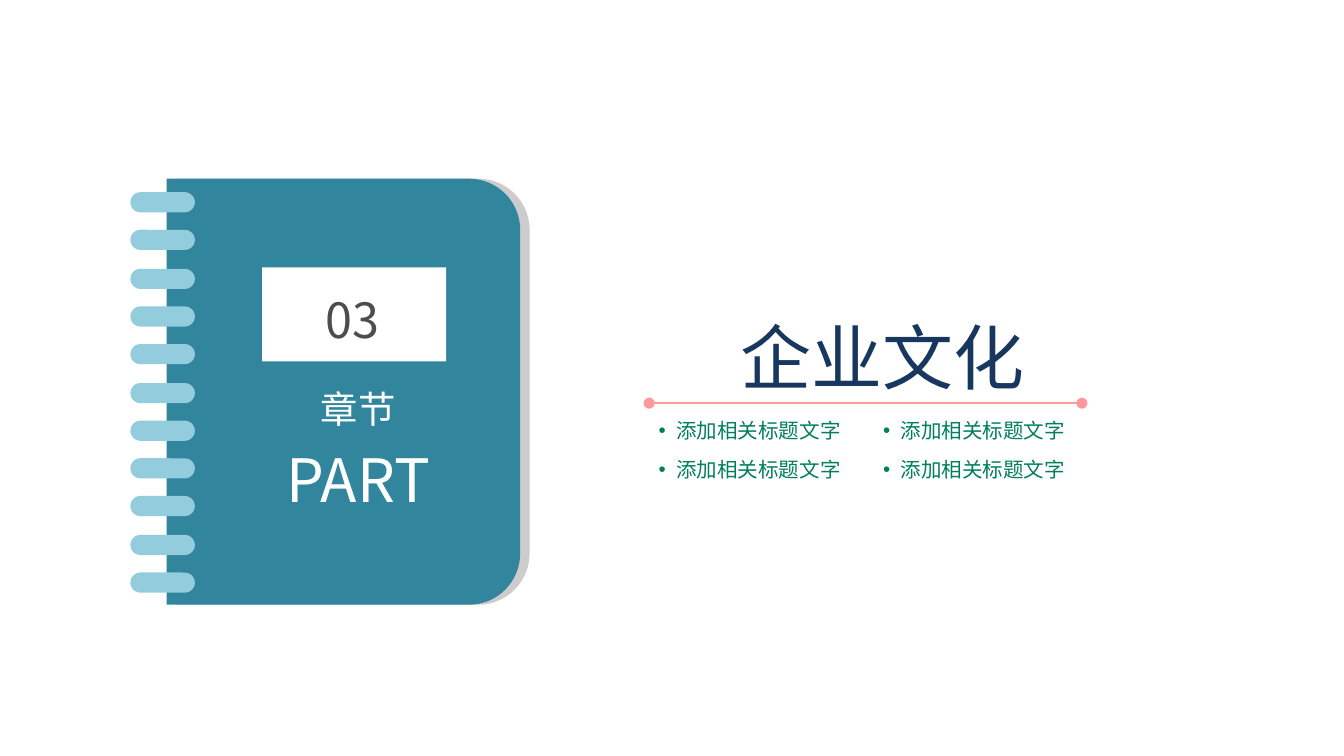
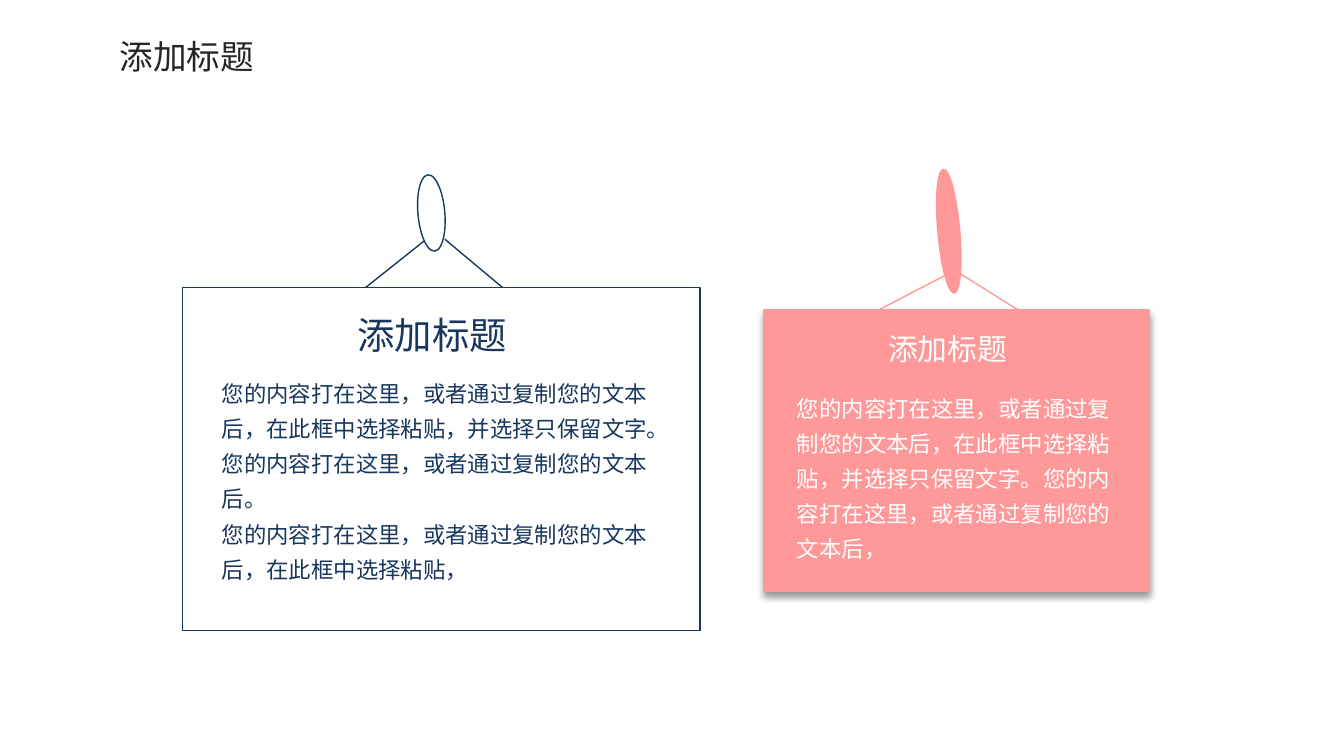
from lxml.etree import SubElement
from pptx import Presentation
from pptx.dml.color import RGBColor
from pptx.enum.shapes import MSO_CONNECTOR, MSO_SHAPE
from pptx.enum.text import MSO_AUTO_SIZE, PP_ALIGN
from pptx.oxml.ns import qn
from pptx.util import Pt

PX = 9144  # 100 px to the inch
NAVY, PINK, WHITE, TEAL, SKY = "17375E", "FF9999", "FFFFFF", "31859C", "93CDDD"
GREEN, GREY, INK, DARK = "007E5D", "CCCCCC", "4D4D4D", "262626"
ARIAL, NOTO = "Arial", "Noto Sans CJK SC"
hue = RGBColor.from_string

deck = Presentation()
deck.slide_width = 1000 * PX
deck.slide_height = deck.slide_width * 9 // 16
blank = deck.slide_layouts[6]


def draw(host, kind, box, fill=None, line=None, width=1):
    """Add a preset shape, or a straight connector when kind is None."""
    spots = [n * PX for n in box]
    if kind is None:
        shape = host.add_connector(MSO_CONNECTOR.STRAIGHT, *spots)
        SubElement(shape._element.spPr, qn("a:effectLst"))
    else:
        shape = host.add_shape(kind, *spots)
        shape.shadow.inherit = False
        if fill:
            shape.fill.solid()
            shape.fill.fore_color.rgb = hue(fill)
        else:
            shape.fill.background()
    if line:
        shape.line.color.rgb = hue(line)
        shape.line.width = Pt(width)
    else:
        shape.line.fill.background()
    return shape


def write(host, box, rows, color, face=NOTO, pad=(10, 5), wrap=True,
          align=None, lead=None, dot=False):
    """Add a text box; rows holds (text, size) pairs, one a paragraph."""
    frame = host.add_textbox(*[n * PX for n in box]).text_frame
    frame.word_wrap = wrap
    frame.auto_size = MSO_AUTO_SIZE.SHAPE_TO_FIT_TEXT
    frame.margin_left = frame.margin_right = pad[0] * PX
    frame.margin_top = frame.margin_bottom = pad[1] * PX
    for i, (words, size) in enumerate(rows):
        para = frame.add_paragraph() if i else frame.paragraphs[0]
        if dot:
            para.level = 1
            props = para._p.get_or_add_pPr()
            props.set("marL", str(13 * PX))
            props.set("indent", str(-13 * PX))
            SubElement(props, qn("a:buFont")).set("typeface", ARIAL)
            SubElement(props, qn("a:buChar")).set("char", "•")
        if align:
            para.alignment = align
        if lead:
            para.line_spacing = lead
        if i:
            para.space_before = Pt(size * 0.2)
        run = para.add_run()
        run.text = words
        font = run.font
        font.size, font.name = Pt(size), face
        font.color.rgb = hue(color)
        SubElement(font._element, qn("a:ea")).set("typeface", face)


# Slide 1: chapter title
page = deck.slides.add_slide(blank).shapes
rule = draw(page, None, (483, 300, 805, 300), line=PINK)
for end in ("a:headEnd", "a:tailEnd"):
    SubElement(rule.line._get_or_add_ln(), qn(end)).set("type", "oval")
write(page, (483, 233, 348, 65), [("企业文化", 38)], NAVY, ARIAL,
      pad=(0, 0), align=PP_ALIGN.CENTER)
for top in (307, 336):
    for left in (483, 650):
        write(page, (left, top, 155, 26), [("添加相关标题文字", 11)], GREEN,
              ARIAL, pad=(7, 4), wrap=False, dot=True)

# Notebook: back page and cover, turned so the round corners face right
book = page.add_group_shape().shapes
for left, fill in ((131, GREY), (124, TEAL)):
    cover = draw(book, MSO_SHAPE.ROUND_2_SAME_RECTANGLE,
                 (left - 27, 160, 317, 263), fill)
    cover.rotation = 90
    cover.adjustments[0] = 0.145
draw(book, MSO_SHAPE.RECTANGLE, (195, 199, 137, 70), WHITE)

# Binding rings
for i in range(11):
    ring = draw(book, MSO_SHAPE.ROUNDED_RECTANGLE,
                (97, 143 + round(28.3 * i), 48, 15), SKY)
    ring.adjustments[0] = 0.5

# Notebook labels
write(book, (198, 216, 129, 44), [("03", 26)], INK, pad=(0, 0),
      align=PP_ALIGN.CENTER)
write(book, (205, 287, 123, 98), [("章节", 20), ("PART", 32)], WHITE,
      pad=(0, 0), align=PP_ALIGN.CENTER)

# Slide 2: two hanging boards
page = deck.slides.add_slide(blank).shapes
write(page, (79, 22, 121, 40), [("添加标题", 18)], DARK, wrap=False)

# Each board: cords, peg, panel, fill, line colour, peg and panel line widths
boards = (
    ((272, 214, 316, 179), (331, 178, 374, 214), (311, 130, 20, 57),
     (136, 214, 385, 255), None, NAVY, 0.75, 0.75),
    ((655, 230, 703, 205), (715, 204, 758, 231), (698, 126, 16, 92),
     (569, 231, 285, 208), PINK, PINK, 1, 2),
)
for left, right, peg, panel, fill, line, thin, thick in boards:
    group = page.add_group_shape().shapes
    for cord in (left, right):
        draw(group, None, cord, line=line, width=0.75)
    draw(group, MSO_SHAPE.OVAL, peg, fill, line, thin).rotation = 355
    board = draw(group, MSO_SHAPE.RECTANGLE, panel, fill, line, thick)

# Soft shadow under the pink board
glow = SubElement(board._element.spPr.find(qn("a:effectLst")),
                  qn("a:outerShdw"), blurRad=str(Pt(4)), dist=str(Pt(3)),
                  dir="5400000", rotWithShape="0")
tint = SubElement(glow, qn("a:srgbClr"), val="000000")
SubElement(tint, qn("a:alpha"), val="40000")

# Board texts
start = "您的内容打在这里，或者通过复制您的文本后，"
pick = "在此框中选择粘贴，"
keep = "并选择只保留文字。"
for box, words, color in (
    ((158, 273, 341, 113), start + pick + keep + start[:-1] + "。", NAVY),
    ((158, 378, 341, 58), start + pick, NAVY),
    ((586, 284, 252, 139), start + pick + keep + start, WHITE),
):
    write(page, box, [(words, 12)], color, pad=(7, 4), lead=1.3)
for box, size, color in (((256, 227, 132, 44), 20, NAVY),
                         ((651, 241, 110, 37), 16, WHITE)):
    write(page, box, [("添加标题", size)], color, wrap=False)

deck.save("out.pptx")
